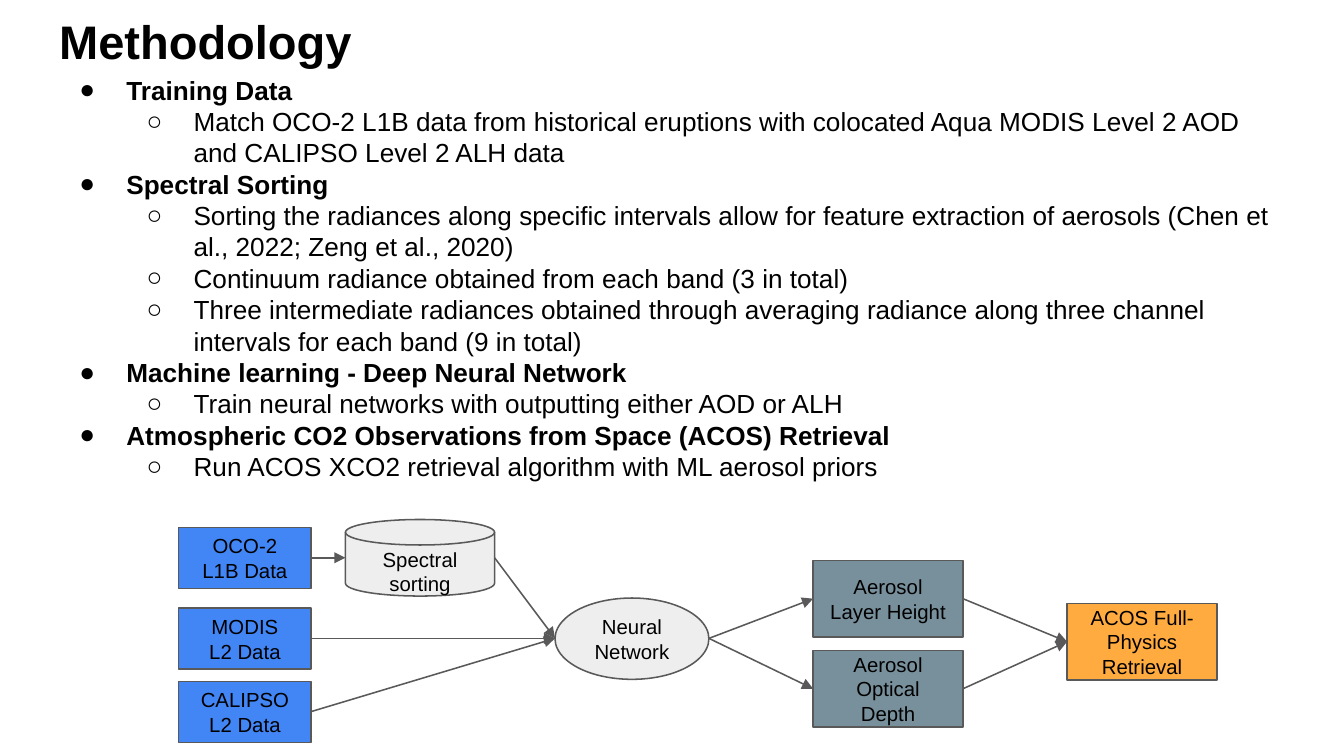
from lxml.etree import SubElement
from pptx import Presentation
from pptx.dml.color import RGBColor as Rgb
from pptx.enum.shapes import MSO_CONNECTOR as Line, MSO_SHAPE as Form
from pptx.enum.text import MSO_ANCHOR as Anchor, MSO_AUTO_SIZE as Fit, PP_ALIGN as Align
from pptx.oxml.ns import qn
from pptx.util import Pt

PX = 4572  # 200 px to the inch
HUES = {"ink": "000000", "edge": "595959", "data": "4285F4", "step": "EEEEEE",
        "result": "78909C", "final": "FFAB40"}


def place(shape, left, top, width, height):
    shape.left, shape.top = left * PX, top * PX
    shape.width, shape.height = width * PX, height * PX


def write(shape, rows, size=10.9, align=Align.CENTER, anchor=Anchor.MIDDLE,
          inset=22, bold=False, list_=False):
    """Fill a shape with (level, text) rows; in a list, level 0 is a bold heading."""
    frame = shape.text_frame
    frame.word_wrap, frame.auto_size = True, Fit.NONE
    frame.vertical_anchor = anchor
    frame.margin_left = frame.margin_right = inset * PX
    frame.margin_top = frame.margin_bottom = inset * PX
    for i, (level, words) in enumerate(rows):
        para = frame.paragraphs[0] if i == 0 else frame.add_paragraph()
        if list_:
            para.level = level
            props = para._p.get_or_add_pPr()
            props.set("marL", str((100 + 100 * level) * PX))
            props.set("indent", str(-70 * PX))
            tint = SubElement(props, qn("a:buClr"))
            SubElement(tint, qn("a:srgbClr")).set("val", HUES["ink"])
            SubElement(props, qn("a:buChar")).set("char", "●○"[level])
        para.alignment, para.line_spacing = align, 1.0
        para.space_before = para.space_after = Pt(0)
        run = para.add_run()
        run.text = words
        font = run.font
        font.name, font.size = "Arial", Pt(size)
        font.bold = level == 0 if list_ else bold
        font.color.rgb = Rgb.from_string(HUES["ink"])


deck = Presentation()
deck.slide_width, deck.slide_height = 2000 * PX, 1125 * PX
slide = deck.slides.add_slide(deck.slide_layouts[1])
shapes = slide.shapes

title, body = shapes.title, slide.placeholders[1]
place(title, 68, -2, 1864, 126)
write(title, [(0, "Methodology")], size=25.2, align=Align.LEFT, anchor=Anchor.TOP,
      inset=20, bold=True)

points = [
    (0, "Training Data"),
    (1, "Match OCO-2 L1B data from historical eruptions with colocated Aqua MODIS "
        "Level 2 AOD and CALIPSO Level 2 ALH data"),
    (0, "Spectral Sorting"),
    (1, "Sorting the radiances along specific intervals allow for feature extraction "
        "of aerosols (Chen et al., 2022; Zeng et al., 2020)"),
    (1, "Continuum radiance obtained from each band (3 in total)"),
    (1, "Three intermediate radiances obtained through averaging radiance along three "
        "channel intervals for each band (9 in total)"),
    (0, "Machine learning - Deep Neural Network"),
    (1, "Train neural networks with outputting either AOD or ALH"),
    (0, "Atmospheric CO2 Observations from Space (ACOS) Retrieval"),
    (1, "Run ACOS XCO2 retrieval algorithm with ML aerosol priors"),
]
place(body, 68, 90, 1864, 658)
write(body, points, size=14, align=Align.LEFT, anchor=Anchor.TOP, inset=20, list_=True)

# Flow chart: name -> form, hue, frame, lines of text
nodes = {
    "oco": (Form.RECTANGLE, "data", (266, 785, 197, 91), ["OCO-2 L1B Data"]),
    "modis": (Form.RECTANGLE, "data", (266, 905, 197, 91), ["MODIS", "L2 Data"]),
    "calipso": (Form.RECTANGLE, "data", (266, 1014, 197, 91), ["CALIPSO L2 Data"]),
    "sort": (Form.FLOWCHART_DIRECT_ACCESS_STORAGE, "step", (568, 719, 114, 222), []),
    "net": (Form.OVAL, "step", (826, 890, 229, 121), ["Neural Network"]),
    "height": (Form.RECTANGLE, "result", (1210, 834, 223, 114), ["Aerosol Layer Height"]),
    "depth": (Form.RECTANGLE, "result", (1210, 968, 223, 114), ["Aerosol Optical Depth"]),
    "acos": (Form.RECTANGLE, "final", (1588, 898, 223, 114), ["ACOS Full-Physics Retrieval"]),
}
ports = {}  # name -> left end, right end, middle height
for name, (form, hue, (left, top, width, height), lines) in nodes.items():
    node = shapes.add_shape(form, 0, 0, 0, 0)
    place(node, left, top, width, height)
    node.shadow.inherit = False
    node.fill.solid()
    node.fill.fore_color.rgb = Rgb.from_string(HUES[hue])
    node.line.color.rgb = Rgb.from_string(HUES["edge"])
    node.line.width = Pt(0.82)
    ports[name] = left, left + width, top + height // 2
    if name == "sort":  # the drum stands upright, so its sides swap
        node.rotation = 270
        mid = left + width // 2
        ports[name] = mid - height // 2, mid + height // 2, top + height // 2
    if lines:
        write(node, [(0, words) for words in lines])

label = shapes.add_textbox(0, 0, 0, 0)
place(label, 527, 792, 196, 130)
write(label, [(0, "Spectral sorting")], anchor=Anchor.TOP)

links = [("oco", "sort"), ("modis", "net"), ("calipso", "net"), ("sort", "net"),
         ("net", "height"), ("net", "depth"), ("height", "acos"), ("depth", "acos")]
for start, end in links:
    _, x1, y1 = ports[start]
    x2, _, y2 = ports[end]
    link = shapes.add_connector(Line.STRAIGHT, x1 * PX, y1 * PX, x2 * PX, y2 * PX)
    link.line.color.rgb = Rgb.from_string(HUES["edge"])
    link.line.width = Pt(0.82)
    SubElement(link.line._get_or_add_ln(), qn("a:tailEnd")).set("type", "triangle")
    SubElement(link._element.spPr, qn("a:effectLst"))

deck.save("out.pptx")
